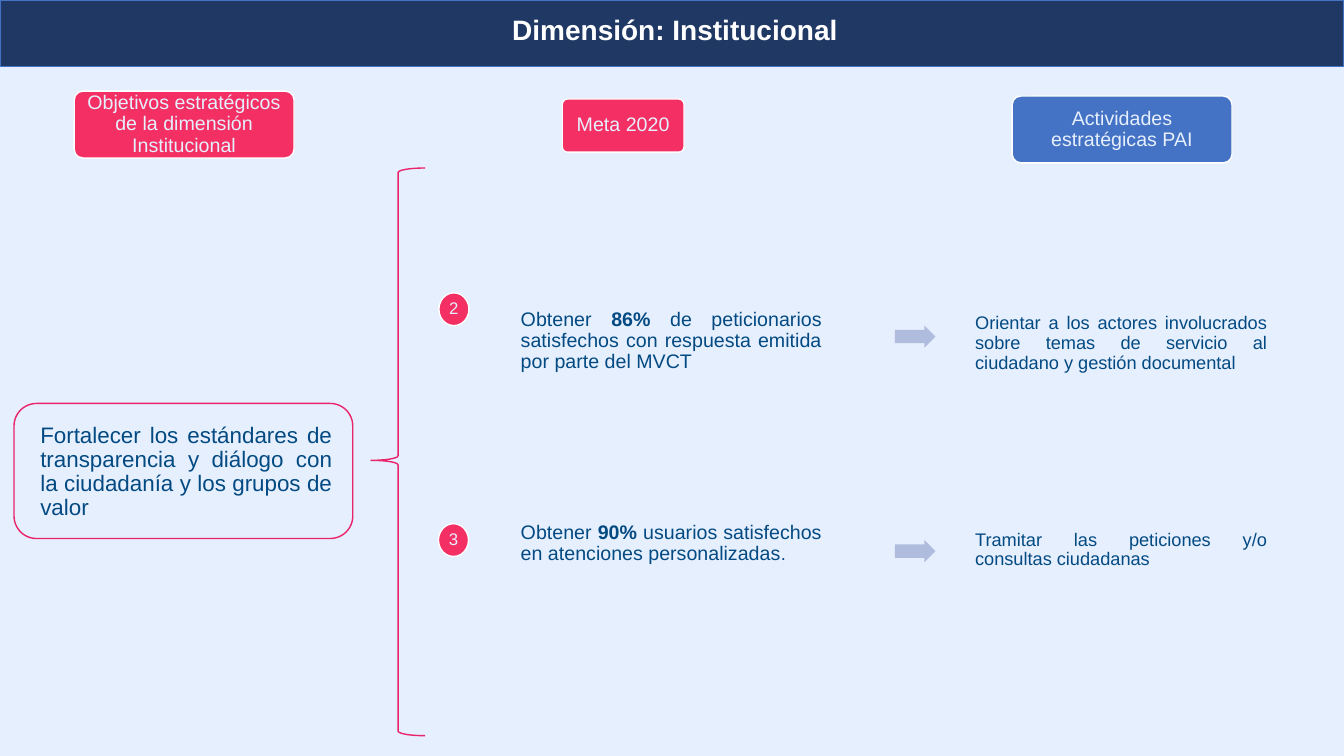
"""Builds the slide on the institutional dimension, its goals and its activities."""
import pptx
import pptx.util
import pptx.dml.color
import pptx.enum.shapes
import pptx.enum.text

Pt = pptx.util.Pt
Shape = pptx.enum.shapes.MSO_SHAPE
Align = pptx.enum.text.PP_ALIGN
PINK, ROSE, BLUE, NAVY = "F42F63", "EA246B", "4472C4", "203864"
PALE, INK, WHITE, LILAC = "E6EFFD", "034A83", "FFFFFF", "B0BCDE"


def colour(value):
    return pptx.dml.color.RGBColor.from_string(value)


def write(box, spans, align, ink, inset):
    frame = box.text_frame
    frame_format = {
        "word_wrap": True,
        "auto_size": pptx.enum.text.MSO_AUTO_SIZE.NONE,
        "vertical_anchor": pptx.enum.text.MSO_ANCHOR.MIDDLE,
        "margin_left": Pt(inset), "margin_right": Pt(inset),
        "margin_top": Pt(inset), "margin_bottom": Pt(inset),
    }
    for name, value in frame_format.items():
        setattr(frame, name, value)
    para = frame.paragraphs[0]
    for name, value in {"alignment": align, "line_spacing": 0.9, "space_before": Pt(0)}.items():
        setattr(para, name, value)
    for text, size, bold in spans:
        span = para.add_run()
        span.text = text
        for name, value in {"name": "Arial", "size": Pt(size), "bold": bold}.items():
            setattr(span.font, name, value)
        span.font.color.rgb = colour(ink)


deck = pptx.Presentation()
deck.slide_width, deck.slide_height = Pt(960), Pt(540)
page = deck.slides.add_slide(deck.slide_layouts[5])
page.background.fill.solid()
page.background.fill.fore_color.rgb = colour(PALE)

title = page.shapes.title
for name, value in {"left": 0, "top": 0, "width": 960, "height": 47.5}.items():
    setattr(title, name, Pt(value))
write(title, [("Dimensión: Institucional", 20, True)], Align.LEFT, WHITE, 3.6)
title.text_frame.margin_left = Pt(365.8)
title.text_frame.margin_bottom = Pt(6.3)
title.fill.solid()
title.fill.fore_color.rgb = colour(NAVY)
title.line.color.rgb = colour(BLUE)
title.line.width = Pt(1)

shapes = [
    (Shape.ROUNDED_RECTANGLE, (53, 65.1, 157, 47.7), [0.13], PINK, WHITE,
     "Objetivos estratégicos de la dimensión Institucional", 14),
    (Shape.ROUNDED_RECTANGLE, (401.6, 70.7, 87, 38), [0.1], PINK, WHITE, "Meta 2020", 14),
    (Shape.ROUNDED_RECTANGLE, (723, 68.6, 157, 47.7), [0.13], BLUE, WHITE,
     "Actividades estratégicas PAI", 14),
    (Shape.ROUNDED_RECTANGLE, (10, 288.2, 242, 96.5), [], None, ROSE, "", 0),
    (Shape.LEFT_BRACE, (265, 120, 38.7, 405.5), [0.083, 0.515], None, ROSE, "", 0),
    (Shape.OVAL, (313.5, 209.2, 21.5, 23.4), [], PINK, WHITE, "2", 12),
    (Shape.OVAL, (313.2, 374.1, 21.5, 23.4), [], PINK, WHITE, "3", 12),
    (Shape.RIGHT_ARROW, (639.2, 232.4, 29, 16), [0.6, 0.5], LILAC, None, "", 0),
    (Shape.RIGHT_ARROW, (639.2, 385.7, 29, 16), [0.6, 0.5], LILAC, None, "", 0),
]
for kind, place, adjustments, fill, line, text, size in shapes:
    shape = page.shapes.add_shape(kind, *map(Pt, place))
    shape.shadow.inherit = False
    for index, value in enumerate(adjustments):
        shape.adjustments[index] = value
    if fill:
        shape.fill.solid()
        shape.fill.fore_color.rgb = colour(fill)
    else:
        shape.fill.background()
    if line:
        shape.line.color.rgb = colour(line)
        shape.line.width = Pt(1)
    else:
        shape.line.fill.background()
    if text:
        write(shape, [(text, size, False)], Align.CENTER, PALE, 4 if size == 14 else 0)

texts = [
    ((27.4, 289.7, 211.2, 95), [
        ("Fortalecer los estándares de transparencia y diálogo con la ciudadanía "
         "y los grupos de valor", 16, False)]),
    ((370.6, 208.4, 217.8, 70.6), [
        ("Obtener ", 14, False), ("86% ", 14, True),
        ("de peticionarios satisfechos con respuesta emitida por parte del MVCT", 14, False)]),
    ((370.6, 363.1, 217.8, 50.4), [
        ("Obtener ", 14, False), ("90%", 14, True),
        (" usuarios satisfechos en atenciones personalizadas", 14, False), (".", 13, False)]),
    ((695.2, 208.8, 211, 73.4), [
        ("Orientar a los actores involucrados sobre temas de servicio al ciudadano "
         "y gestión documental", 13, False)]),
    ((695.2, 356.2, 211, 73.4), [
        ("Tramitar las peticiones y/o consultas ciudadanas", 13, False)]),
]
for place, spans in texts:
    box = page.shapes.add_textbox(*map(Pt, place))
    write(box, spans, Align.JUSTIFY, INK, 1.4)

deck.save("out.pptx")
